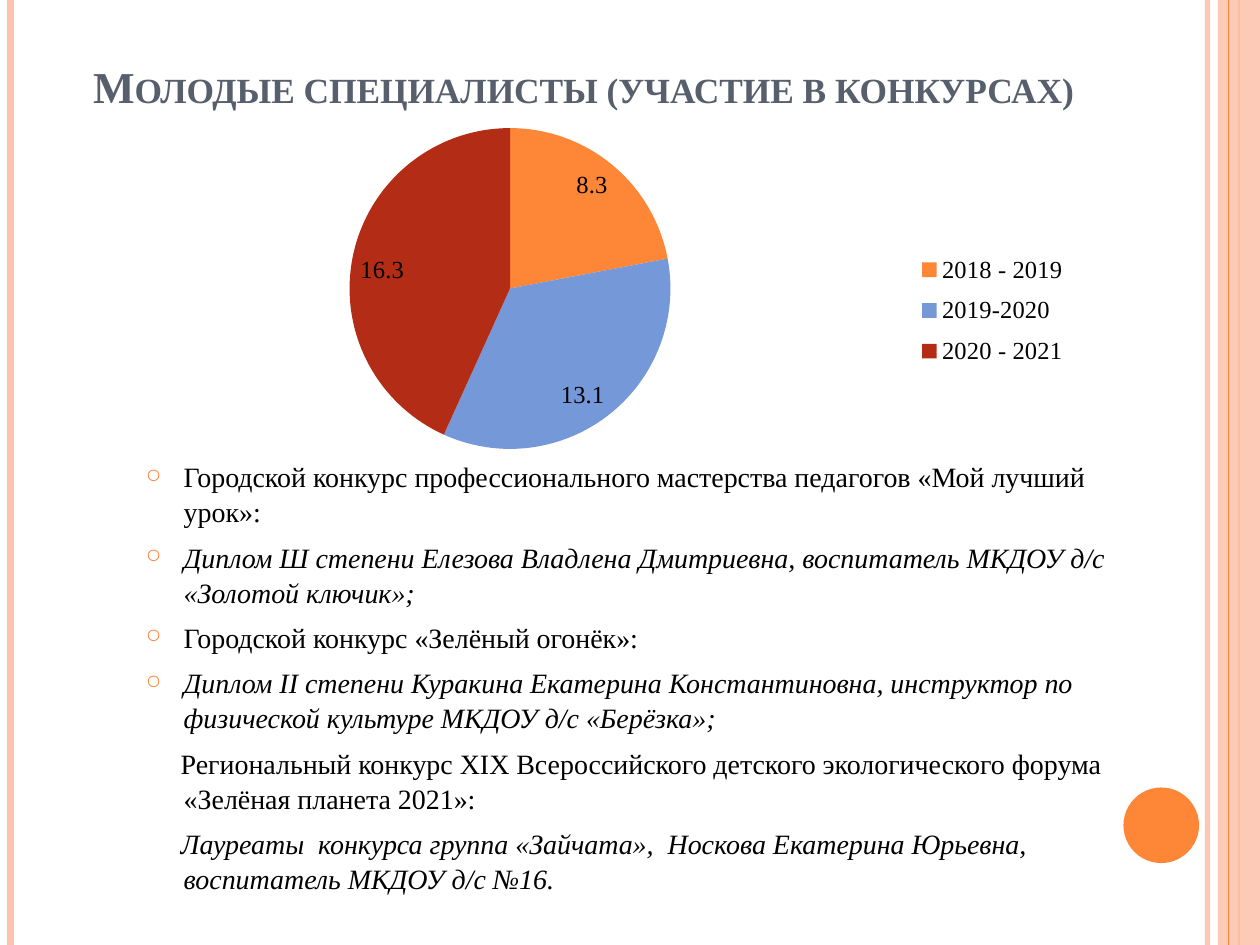
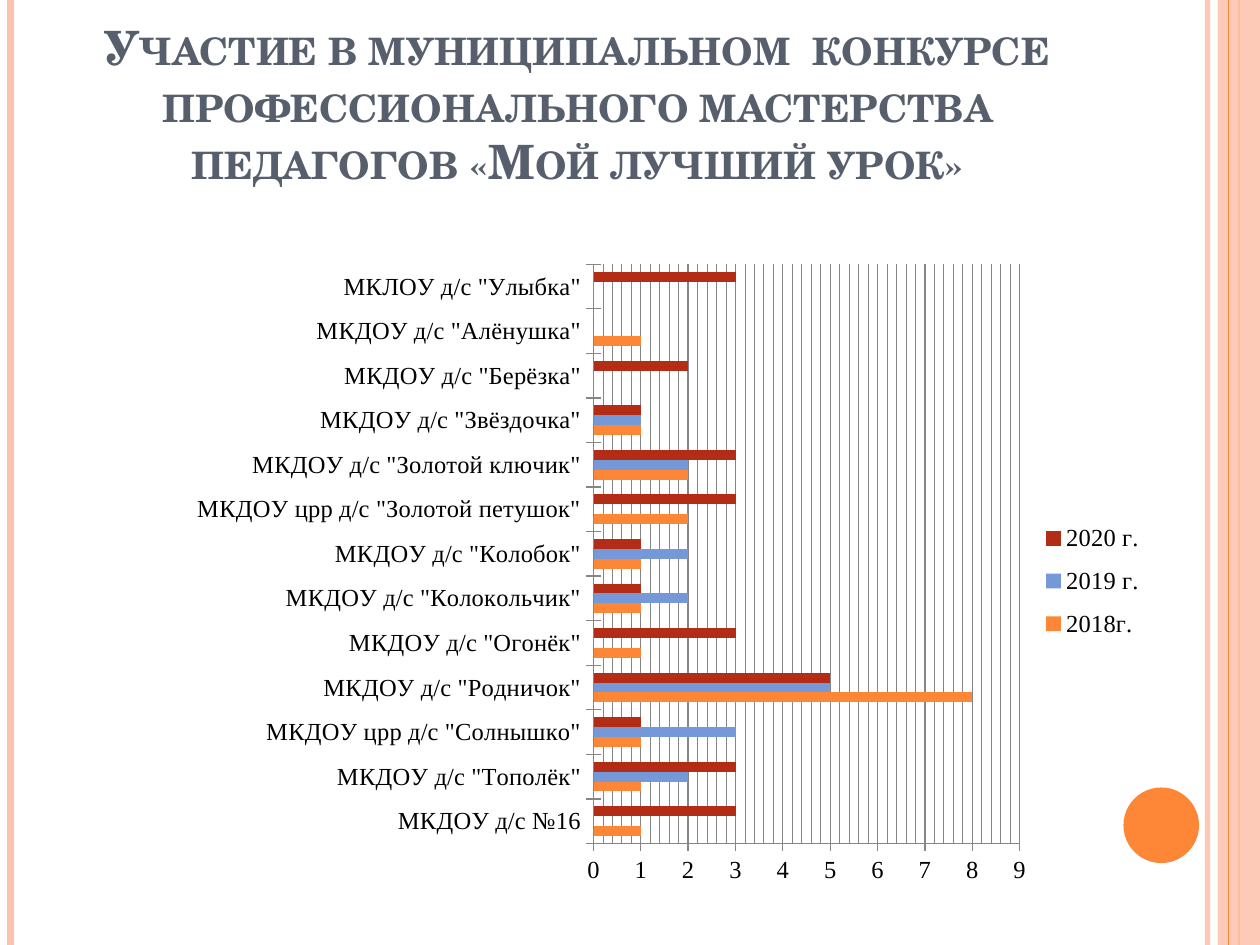
from dataclasses import dataclass

from lxml import etree
from pptx import Presentation
from pptx import util as u
from pptx.chart import data as chart_data
from pptx.dml.color import RGBColor
from pptx.enum import chart as ch, shapes, text
from pptx.oxml.ns import qn

Pt = u.Pt
ORANGE = RGBColor(0xFE, 0x86, 0x37)
PEACH = RGBColor(0xFE, 0xC3, 0xAE)
BLUE = RGBColor(0x75, 0x98, 0xD9)
RED = RGBColor(0xB3, 0x2C, 0x16)
SLATE = RGBColor(0x57, 0x5F, 0x6D)
GREY = RGBColor(0x86, 0x86, 0x86)
BLACK = RGBColor(0, 0, 0)

SERIF = "Times New Roman"
SCHOLA = "TeX Gyre Schola"
WIDTH, HEIGHT = 720, 540


@dataclass(frozen=True)
class Box:
    left: float
    top: float
    width: float
    height: float

    def points(self):
        return Pt(self.left), Pt(self.top), Pt(self.width), Pt(self.height)


@dataclass(frozen=True)
class Stripe:
    x: float
    weight: float
    color: RGBColor
    opacity: int = 100


@dataclass(frozen=True)
class Item:
    text: str
    bullet: bool = True
    italic: bool = False


@dataclass(frozen=True)
class Series:
    name: str
    values: tuple
    color: RGBColor


STRIPES_BELOW = (
    Stripe(690, 3, PEACH, 93),
    Stripe(6, 4.5, PEACH),
    Stripe(708, 1.5, ORANGE),
)
STRIPE_ABOVE = Stripe(702, 0.75, ORANGE)
BAND = Box(696, 0, 24, HEIGHT)
DISC = Box(642, 450, 43.2, 43.2)

CONTESTS = (
    Item("Городской конкурс профессионального мастерства педагогов «Мой лучший урок»:"),
    Item("Диплом Ш степени Елезова Владлена Дмитриевна, воспитатель МКДОУ д/с «Золотой ключик»;", italic=True),
    Item("Городской конкурс «Зелёный огонёк»:"),
    Item("Диплом II степени Куракина Екатерина Константиновна, инструктор по физической культуре "
         "МКДОУ д/с «Берёзка»;", italic=True),
    Item("Региональный конкурс XIX Всероссийского детского экологического форума «Зелёная планета 2021»:",
         bullet=False),
    Item("Лауреаты  конкурса группа «Зайчата»,  Носкова Екатерина Юрьевна, воспитатель МКДОУ д/с №16.",
         bullet=False, italic=True),
)

YEARS = ("2018 - 2019", "2019-2020", "2020 - 2021")
YEAR_SHARES = (8.3, 13.1, 16.3)
YEAR_COLORS = (ORANGE, BLUE, RED)

KINDERGARTENS = (
    "МКДОУ д/с №16",
    'МКДОУ д/с "Тополёк"',
    'МКДОУ црр д/с "Солнышко"',
    'МКДОУ д/с "Родничок"',
    'МКДОУ д/с "Огонёк"',
    'МКДОУ д/с "Колокольчик"',
    'МКДОУ д/с "Колобок"',
    'МКДОУ црр д/с "Золотой петушок"',
    'МКДОУ д/с "Золотой ключик"',
    'МКДОУ д/с "Звёздочка"',
    'МКДОУ д/с "Берёзка"',
    'МКДОУ д/с "Алёнушка"',
    'МКЛОУ д/с "Улыбка"',
)
PARTICIPATION = (
    Series("2018г.", (1, 1, 1, 8, 1, 1, 1, 2, 2, 1, 0, 1, 0), ORANGE),
    Series("2019 г.", (0, 2, 3, 5, 0, 2, 2, 0, 2, 1, 0, 0, 0), BLUE),
    Series("2020 г.", (3, 3, 1, 5, 3, 1, 1, 3, 3, 1, 2, 0, 3), RED),
)


def write(para, words: str, *, font: str = SERIF, size: float = 16, color: RGBColor = BLACK,
          bold: bool = False, italic: bool = False, small_caps: bool = False, align=None) -> None:
    span = para.add_run()
    span.text = words
    span.font.name = font
    span.font.size = Pt(size)
    span.font.color.rgb = color
    span.font.bold = bold
    span.font.italic = italic
    if small_caps:
        span.font._element.set("cap", "small")
    if align is not None:
        para.alignment = align


def set_opacity(shape, percent: int) -> None:
    if percent < 100:
        color = next(shape._element.spPr.iter(qn("a:srgbClr")))
        etree.SubElement(color, qn("a:alpha")).set("val", str(percent * 1000))


def draw_stripe(page, stripe: Stripe) -> None:
    line = page.shapes.add_connector(shapes.MSO_CONNECTOR.STRAIGHT, Pt(stripe.x), Pt(0), Pt(stripe.x), Pt(HEIGHT))
    line.line.color.rgb = stripe.color
    line.line.width = Pt(stripe.weight)
    set_opacity(line, stripe.opacity)
    etree.SubElement(line._element.spPr, qn("a:effectLst"))


def draw_shape(page, kind, box: Box, color: RGBColor, opacity: int = 100) -> None:
    shape = page.shapes.add_shape(kind, *box.points())
    shape.fill.solid()
    shape.fill.fore_color.rgb = color
    set_opacity(shape, opacity)
    shape.line.fill.background()
    shape.shadow.inherit = False


def add_page(deck, title_lines: tuple, box: Box, font: str, size: float):
    page = deck.slides.add_slide(deck.slide_layouts[5])
    for stripe in STRIPES_BELOW:
        draw_stripe(page, stripe)
    draw_shape(page, shapes.MSO_SHAPE.RECTANGLE, BAND, PEACH, 87)
    draw_stripe(page, STRIPE_ABOVE)
    draw_shape(page, shapes.MSO_SHAPE.OVAL, DISC, ORANGE)
    title = page.shapes.title
    title.left, title.top, title.width, title.height = box.points()
    frame = title.text_frame
    frame.word_wrap = True
    frame.auto_size = text.MSO_AUTO_SIZE.NONE
    frame.vertical_anchor = text.MSO_ANCHOR.BOTTOM
    for index, words in enumerate(title_lines):
        para = frame.add_paragraph() if index else frame.paragraphs[0]
        write(para, words, font=font, size=size, color=SLATE, bold=True, small_caps=True,
              align=text.PP_ALIGN.CENTER)
    return page


def add_items(page, items: tuple, box: Box) -> None:
    frame = page.shapes.add_textbox(*box.points()).text_frame
    frame.word_wrap = True
    for index, item in enumerate(items):
        para = frame.add_paragraph() if index else frame.paragraphs[0]
        para.space_before = Pt(6)
        para.line_spacing = 1.04
        write(para, item.text, italic=item.italic)
        props = para._p.get_or_add_pPr()
        props.set("marL", str(Pt(21.6)))
        props.set("indent", str(Pt(-21.6 if item.bullet else -1.7)))
        if item.bullet:
            color = etree.SubElement(props, qn("a:buClr"))
            etree.SubElement(color, qn("a:srgbClr")).set("val", str(ORANGE))
            etree.SubElement(props, qn("a:buSzPct")).set("val", "70000")
            etree.SubElement(props, qn("a:buChar")).set("char", "○")


def place(part, area: Box, inner: bool = False) -> None:
    for old in part.findall(qn("c:layout")):
        part.remove(old)
    layout = etree.Element(qn("c:layout"))
    manual = etree.SubElement(layout, qn("c:manualLayout"))
    settings = [("layoutTarget", "inner")] if inner else []
    settings += [("xMode", "edge"), ("yMode", "edge"), ("x", area.left), ("y", area.top),
                 ("w", area.width), ("h", area.height)]
    for name, value in settings:
        etree.SubElement(manual, qn(f"c:{name}")).set("val", str(value))
    part.insert(len(part.findall(qn("c:legendPos"))), layout)


def add_chart(page, kind, categories: tuple, series: tuple, box: Box, plot_area: Box, legend_area: Box):
    data = chart_data.CategoryChartData()
    data.categories = categories
    for name, values in series:
        data.add_series(name, values)
    chart = page.shapes.add_chart(kind, *box.points(), data).chart
    chart.has_title = False
    chart.font.name = SERIF
    chart.font.size = Pt(14)
    chart.font.color.rgb = BLACK
    chart.has_legend = True
    chart.legend.position = ch.XL_LEGEND_POSITION.RIGHT
    chart.legend.include_in_layout = False
    place(chart.legend._element, legend_area)
    place(chart._chartSpace.chart.plotArea, plot_area, inner=True)
    return chart


def paint(target, color: RGBColor) -> None:
    target.format.fill.solid()
    target.format.fill.fore_color.rgb = color


def rule(line, weight: float) -> None:
    line.color.rgb = GREY
    line.width = Pt(weight)


def rule_minor_gridlines(axis, weight: float) -> None:
    axis.has_minor_gridlines = True
    grid = axis._element.find(qn("c:minorGridlines"))
    line = etree.SubElement(etree.SubElement(grid, qn("c:spPr")), qn("a:ln"))
    line.set("w", str(Pt(weight)))
    fill = etree.SubElement(line, qn("a:solidFill"))
    etree.SubElement(fill, qn("a:srgbClr")).set("val", str(GREY))


def add_year_pie(page) -> None:
    chart = add_chart(page, ch.XL_CHART_TYPE.PIE, YEARS, (("Series 1", YEAR_SHARES),),
                      Box(133.2, 71.3, 510.5, 193), Box(0, 0.01, 0.62, 0.95), Box(0.75, 0.35, 0.2, 0.4))
    plot = chart.plots[0]
    plot.vary_by_categories = True
    for index, color in enumerate(YEAR_COLORS):
        paint(plot.series[0].points[index], color)
    plot.has_data_labels = True
    labels = plot.data_labels
    labels.show_value = True
    labels.show_percentage = False
    labels.position = ch.XL_LABEL_POSITION.INSIDE_END


def add_participation_bars(page) -> None:
    chart = add_chart(page, ch.XL_CHART_TYPE.BAR_CLUSTERED, KINDERGARTENS,
                      tuple((series.name, series.values) for series in PARTICIPATION),
                      Box(25.2, 135.4, 640.8, 389.5), Box(0.49, 0.04, 0.38, 0.85),
                      Box(0.88, 0.4, 0.11, 0.21))
    plot = chart.plots[0]
    plot.vary_by_categories = False
    plot.gap_width = 150
    for bars, series in zip(plot.series, PARTICIPATION):
        paint(bars, series.color)
    for axis in (chart.category_axis, chart.value_axis):
        axis.major_tick_mark = ch.XL_TICK_MARK.CROSS
        axis.minor_tick_mark = ch.XL_TICK_MARK.NONE
        rule(axis.format.line, 0.75)
    scale = chart.value_axis
    scale.minimum_scale, scale.maximum_scale = 0, 9
    scale.major_unit, scale.minor_unit = 1, 0.2
    scale.has_major_gridlines = True
    rule(scale.major_gridlines.format.line, 0.75)
    rule_minor_gridlines(scale, 0.5)


def main() -> None:
    deck = Presentation()
    deck.slide_width, deck.slide_height = Pt(WIDTH), Pt(HEIGHT)

    page = add_page(deck, ("Молодые специалисты (участие в конкурсах)",),
                    Box(42.5, 0, 581.8, 67.7), SERIF, 25.2)
    add_items(page, CONTESTS, Box(76.3, 258.5, 566.6, 249.1))
    add_year_pie(page)

    page = add_page(deck, ("Участие в муниципальном  конкурсе",
                           "профессионального мастерства педагогов «Мой лучший урок»"),
                    Box(36, 21.6, 588.2, 90), SCHOLA, 27)
    add_participation_bars(page)

    deck.save("out.pptx")


if __name__ == "__main__":
    main()
